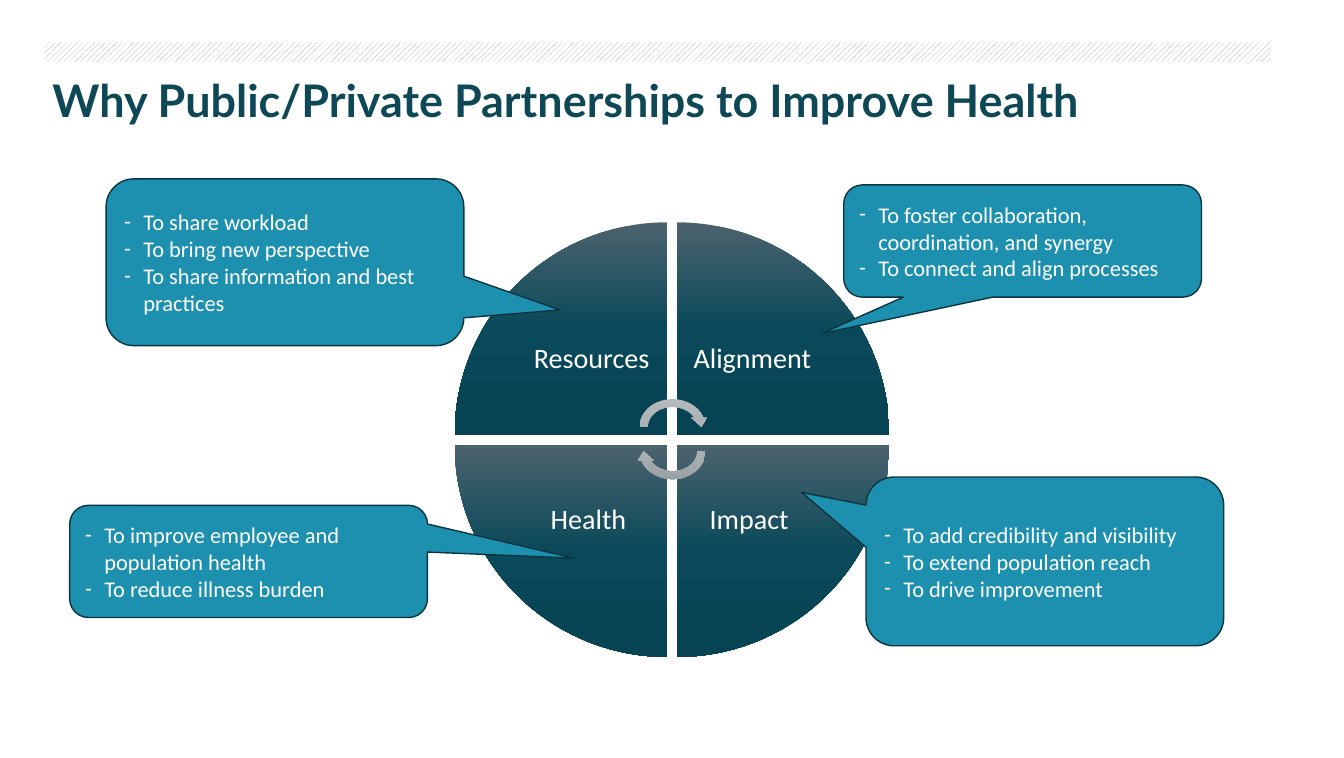
"""Build the slide on public/private partnerships to improve health."""
from lxml import etree
from pptx import Presentation
from pptx.dml.color import RGBColor
from pptx.enum import dml, shapes, text
from pptx.oxml import ns
from pptx.util import Inches, Pt

COLORS = {
    "white": "FFFFFF", "title": "0E4756", "hatch": "9EA7B2",
    "callout": "1C90AE", "outline": "0A3540",
}
WEDGE_STOPS = ("4C636E", "0A495A", "064353")
ARROW_STOPS = ("B5BABD", "ABB1B5", "979EA1")
WEDGE_SIZE, LABEL_SIZE = 2.1, 1.49
COLUMNS, ROWS = (4.5, 6.7), (2.2, 4.4)
QUADRANTS = [
    ("Resources ", 0, 0), ("Alignment", 1, 0),
    ("Impact ", 1, 1), ("Health ", 0, 1),
]
CALLOUTS = [
    ((1.05, 1.77, 3.54, 1.65), (0.769, 0.286),
     ["To share workload", "To bring new perspective",
      "To share information and best practices"]),
    ((8.35, 1.83, 3.54, 1.11), (-0.561, 0.824),
     ["To foster collaboration, coordination, and synergy",
      "To connect and align processes"]),
    ((0.69, 5, 3.54, 1.11), (0.909, -0.029),
     ["To improve employee and population health",
      "To reduce illness burden"]),
    ((8.57, 4.72, 3.54, 1.67), (-0.68, -0.409),
     ["To add credibility and visibility", "To extend population reach",
      "To drive improvement"]),
]


def color(name):
    return RGBColor.from_string(COLORS[name])


def add_shape(slide, kind, box, rotation=0):
    shape = slide.shapes.add_shape(kind, *map(Inches, box))
    shape.shadow.inherit = False
    shape.line.fill.background()
    shape.rotation = rotation
    return shape


def set_font(paragraph, name, size, color_name, bold=False):
    font = paragraph.font
    font.name, font.size, font.bold = name, Pt(size), bold
    font.color.rgb = color(color_name)


def set_gradient(shape, stops):
    shape.fill.background()
    properties = shape._element.spPr
    empty_fill = properties.find(ns.qn("a:noFill"))
    gradient = etree.Element(ns.qn("a:gradFill"), rotWithShape="0")
    stop_list = etree.SubElement(gradient, ns.qn("a:gsLst"))
    for index, value in enumerate(stops):
        stop = etree.SubElement(stop_list, ns.qn("a:gs"), pos=str(index * 50000))
        etree.SubElement(stop, ns.qn("a:srgbClr"), val=value)
    etree.SubElement(gradient, ns.qn("a:lin"), ang="5400000", scaled="0")
    properties.replace(empty_fill, gradient)


def add_text(slide, box, words, inset=None):
    frame = slide.shapes.add_textbox(*map(Inches, box)).text_frame
    frame.word_wrap = True
    frame.vertical_anchor = text.MSO_ANCHOR.MIDDLE
    if inset is not None:
        frame.margin_left = frame.margin_right = Inches(inset)
        frame.margin_top = frame.margin_bottom = Inches(inset)
    paragraph = frame.paragraphs[0]
    paragraph.text = words
    return paragraph


def add_header(slide):
    band = add_shape(slide, shapes.MSO_SHAPE.RECTANGLE, (0.44, 0.42, 12.13, 0.19))
    band.fill.patterned()
    band.fill.pattern = dml.MSO_PATTERN.WIDE_UPWARD_DIAGONAL
    band.fill.fore_color.rgb = color("hatch")
    band.fill.back_color.rgb = color("white")
    title = add_text(slide, (0.42, 0.65, 11.82, 0.67),
                     "Why Public/Private Partnerships to Improve Health")
    set_font(title, "Lato", 32, "title", bold=True)


def add_quadrant(slide, label, column, row, rotation):
    left, top = COLUMNS[column], ROWS[row]
    wedge = add_shape(slide, shapes.MSO_SHAPE.PIE_WEDGE,
                      (left, top, WEDGE_SIZE, WEDGE_SIZE), rotation)
    set_gradient(wedge, WEDGE_STOPS)
    offset = WEDGE_SIZE - LABEL_SIZE
    box = (left + offset * (1 - column), top + offset * (1 - row),
           LABEL_SIZE, LABEL_SIZE)
    paragraph = add_text(slide, box, label, inset=0.16)
    paragraph.alignment = text.PP_ALIGN.CENTER
    paragraph.line_spacing = 0.9
    set_font(paragraph, "Calibri", 20, "white")


def add_cycle_arrow(slide, top, rotation):
    arrow = add_shape(slide, shapes.MSO_SHAPE.CIRCULAR_ARROW,
                      (6.29, top, 0.73, 0.63), rotation)
    set_gradient(arrow, ARROW_STOPS)


def set_dash(paragraph):
    properties = paragraph._p.get_or_add_pPr()
    indent = Inches(0.19)
    properties.set("marL", str(indent))
    properties.set("indent", str(-indent))
    etree.SubElement(properties, ns.qn("a:buFont"), typeface="Calibri")
    etree.SubElement(properties, ns.qn("a:buChar"), char="-")


def add_callout(slide, box, tip, items):
    callout = add_shape(slide, shapes.MSO_SHAPE.ROUNDED_RECTANGULAR_CALLOUT, box)
    callout.adjustments[0], callout.adjustments[1] = tip
    callout.fill.solid()
    callout.fill.fore_color.rgb = color("callout")
    callout.line.color.rgb = color("outline")
    callout.line.width = Pt(1)
    frame = callout.text_frame
    frame.word_wrap = True
    frame.vertical_anchor = text.MSO_ANCHOR.MIDDLE
    for index, item in enumerate(items):
        paragraph = frame.add_paragraph() if index else frame.paragraphs[0]
        paragraph.text = item
        paragraph.alignment = text.PP_ALIGN.LEFT
        set_dash(paragraph)
        set_font(paragraph, "Calibri", 16, "white")


def main():
    presentation = Presentation()
    presentation.slide_width = Inches(13.3)
    presentation.slide_height = Inches(7.5)
    slide = presentation.slides.add_slide(presentation.slide_layouts[6])
    add_header(slide)
    for index, (label, column, row) in enumerate(QUADRANTS):
        add_quadrant(slide, label, column, row, index * 90)
    add_cycle_arrow(slide, 3.91, 0)
    add_cycle_arrow(slide, 4.15, 180)
    for box, tip, items in CALLOUTS:
        add_callout(slide, box, tip, items)
    presentation.save("out.pptx")


if __name__ == "__main__":
    main()
